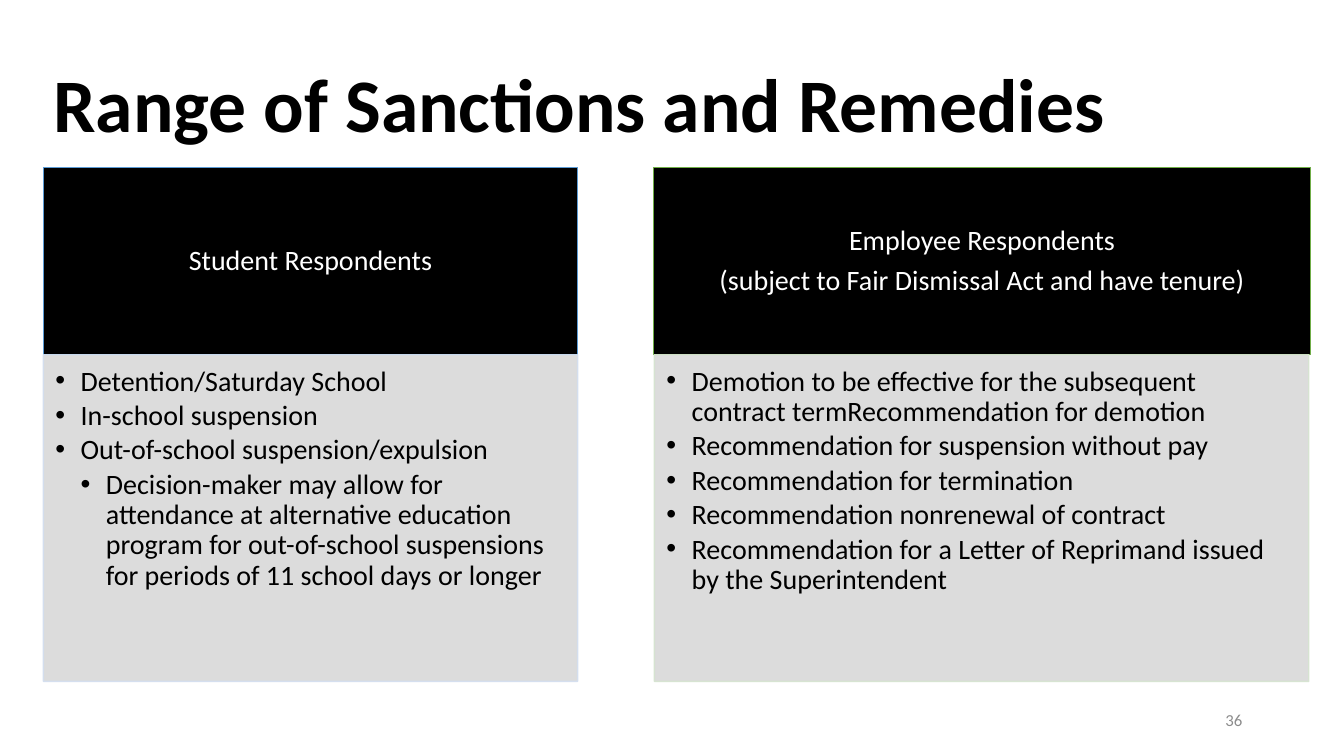
from pptx import Presentation
from pptx.dml.color import RGBColor
from pptx.enum.shapes import MSO_SHAPE
from pptx.enum.text import MSO_ANCHOR, PP_ALIGN
from pptx.util import Pt
from lxml.etree import SubElement
from pptx.oxml.ns import qn

PX = 9144  # 100 px to the inch


def color(value):
    return RGBColor.from_string(value)


class Slide:
    font = "Calibri"
    ink, paper, panel, muted = "000000", "FFFFFF", "D9D9D9", "8C8C8C"

    def __init__(self, deck):
        self.page = deck.slides.add_slide(deck.slide_layouts[6])

    def frame(self, shape, insets, anchor):
        frame = shape.text_frame
        frame.word_wrap = True
        frame.vertical_anchor = anchor
        (frame.margin_left, frame.margin_top,
         frame.margin_right, frame.margin_bottom) = [inset * PX for inset in insets]
        return frame

    def para(self, frame, text, size, ink, align=PP_ALIGN.LEFT, after=0, bold=False):
        first = frame.paragraphs[0]
        para = frame.add_paragraph() if first.runs else first
        para.alignment = align
        para.line_spacing = 0.9
        para.space_after = Pt(after)
        span = para.add_run()
        span.text = text
        span.font.name = self.font
        span.font.size = Pt(size)
        span.font.bold = bold
        span.font.color.rgb = color(ink)
        return para

    def bullet(self, frame, text, level):
        para = self.para(frame, text, 20, self.ink, after=3)
        para.level = level
        properties = para._p.get_or_add_pPr()
        properties.set("marL", str(25 * PX * (level + 1)))
        properties.set("indent", str(-25 * PX))
        SubElement(properties, qn("a:buFont")).set("typeface", "Arial")
        SubElement(properties, qn("a:buChar")).set("char", "•")

    def label(self, left, top, width, height, text, size, ink, **style):
        box = self.page.shapes.add_textbox(left * PX, top * PX, width * PX, height * PX)
        frame = self.frame(box, (10, 5, 10, 5), MSO_ANCHOR.MIDDLE)
        self.para(frame, text, size, ink, **style)

    def box(self, left, top, width, height, fill, line, alpha=100):
        box = self.page.shapes.add_shape(
            MSO_SHAPE.RECTANGLE, left * PX, top * PX, width * PX, height * PX)
        box.shadow.inherit = False
        box.fill.solid()
        box.fill.fore_color.rgb = color(fill)
        box.line.color.rgb = color(line)
        box.line.width = Pt(1)
        if alpha < 100:
            for tint in box._element.spPr.iter(qn("a:srgbClr")):
                SubElement(tint, qn("a:alpha")).set("val", str(alpha * 1000))
        return box

    def header(self, left, width, line, texts):
        box = self.box(left, 166, width, 186, self.ink, line)
        frame = self.frame(box, (16, 9, 16, 9), MSO_ANCHOR.MIDDLE)
        for text in texts:
            self.para(frame, text, 20, self.paper, PP_ALIGN.CENTER, after=7)

    def body(self, left, width, line, items):
        box = self.box(left, 352, width, 324, self.panel, line, alpha=90)
        frame = self.frame(box, (12, 12, 16, 17), MSO_ANCHOR.TOP)
        for level, text in items:
            self.bullet(frame, text, level)


def main():
    deck = Presentation()
    deck.slide_width, deck.slide_height = 1333 * PX, 750 * PX
    slide = Slide(deck)

    # Title
    slide.label(43, 35, 1248, 145, "Range of Sanctions and Remedies", 54, slide.ink, bold=True)

    # Student column
    slide.header(43, 530, "5B9BD5", ["Student Respondents"])
    slide.body(43, 530, "D2DEEF", [
        (0, "Detention/Saturday School"),
        (0, "In-school suspension"),
        (0, "Out-of-school suspension/expulsion"),
        (1, "Decision-maker may allow for attendance at alternative education program "
            "for out-of-school suspensions for periods of 11 school days or longer"),
    ])

    # Employee column
    slide.header(648, 652, "70AD47", [
        "Employee Respondents",
        "(subject to Fair Dismissal Act and have tenure)",
    ])
    slide.body(649, 649, "D5E3CF", [
        (0, "Demotion to be effective for the subsequent contract termRecommendation for demotion"),
        (0, "Recommendation for suspension without pay"),
        (0, "Recommendation for termination"),
        (0, "Recommendation nonrenewal of contract"),
        (0, "Recommendation for a Letter of Reprimand issued by the Superintendent"),
    ])

    # Page number
    slide.label(942, 695, 300, 40, "36", 12, slide.muted, align=PP_ALIGN.RIGHT)

    deck.save("out.pptx")


if __name__ == "__main__":
    main()
